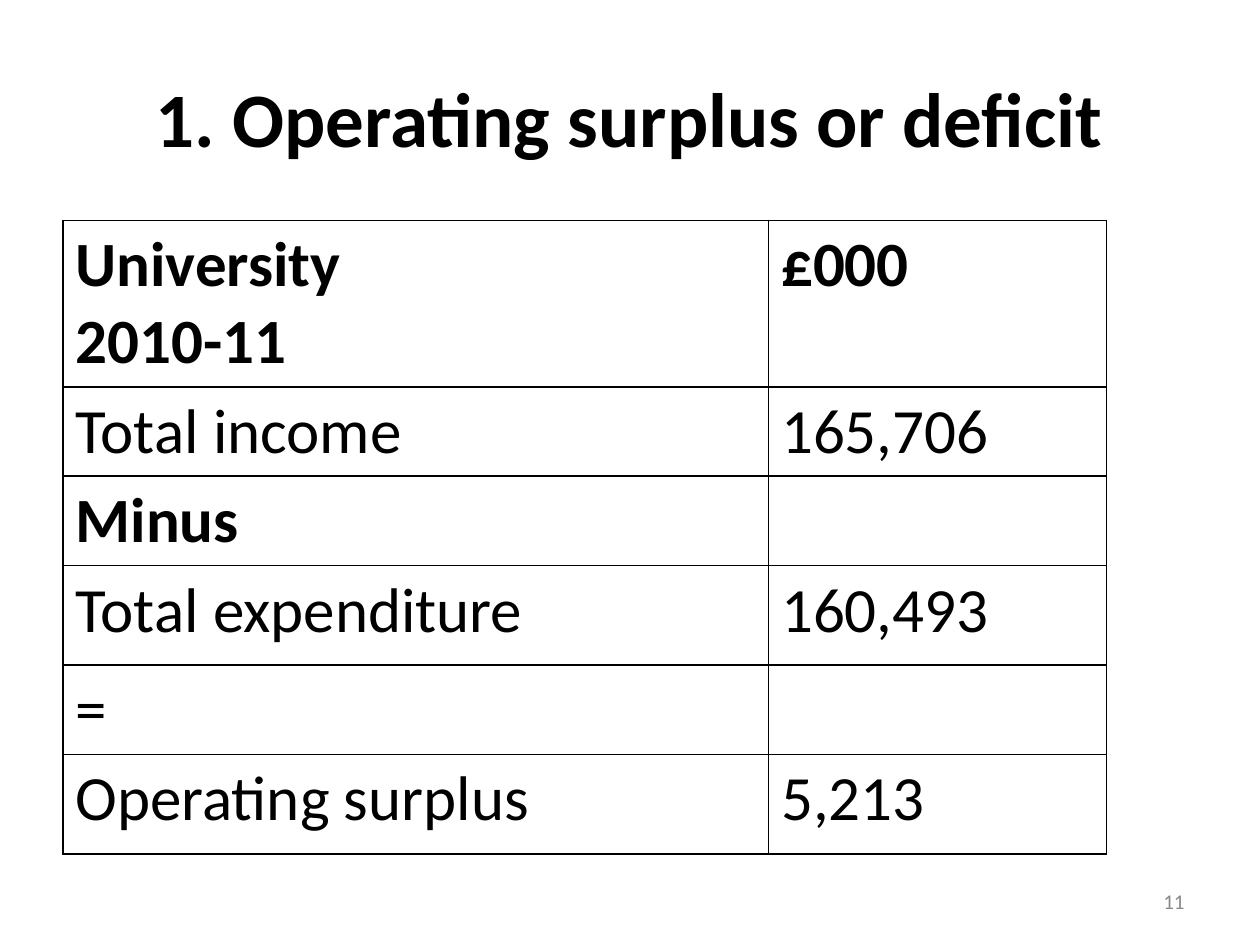
from dataclasses import dataclass

from lxml import etree
from pptx import Presentation
from pptx.dml.color import RGBColor
from pptx.enum.text import MSO_ANCHOR, PP_ALIGN
from pptx.oxml.ns import qn
from pptx.slide import Slide
from pptx.table import _Cell
from pptx.text.text import _Paragraph
from pptx.util import Inches, Pt

BLACK = RGBColor(0x00, 0x00, 0x00)
WHITE = RGBColor(0xFF, 0xFF, 0xFF)
GREY = RGBColor(0x89, 0x89, 0x89)
FONT = "Calibri"
CENTER, RIGHT = PP_ALIGN.CENTER, PP_ALIGN.RIGHT
MIDDLE = MSO_ANCHOR.MIDDLE
BLANK_LAYOUT = 6


@dataclass
class Label:
    text: str
    left: float
    top: float
    width: float
    height: float
    size: int
    color: RGBColor
    align: PP_ALIGN
    bold: bool = False


@dataclass
class Row:
    label: str
    amount: str
    height: float = 0.71
    bold: bool = False


LABELS = [
    Label("1. Operating surplus or deficit", 0.5, 0.3, 9, 1.25, 44, BLACK, CENTER, True),
    Label("11", 7.17, 6.95, 2.33, 0.4, 12, GREY, RIGHT),
]
COLUMN_WIDTHS = [5.6, 2.68]
ROWS = [
    Row("University\n2010-11", "£000", 1.32, True),
    Row("Total income", "165,706"),
    Row("Minus", "", bold=True),
    Row("Total expenditure", "160,493", 0.79),
    Row("=", ""),
    Row("Operating surplus", "5,213", 0.79),
]


def add_run(paragraph: _Paragraph, text: str, size: int, color: RGBColor, bold: bool) -> None:
    run = paragraph.add_run()
    run.text = text
    run.font.name = FONT
    run.font.size = Pt(size)
    run.font.bold = bold
    run.font.color.rgb = color


def add_label(slide: Slide, label: Label) -> None:
    shape = slide.shapes.add_textbox(
        Inches(label.left), Inches(label.top), Inches(label.width), Inches(label.height))
    frame = shape.text_frame
    frame.word_wrap = True
    frame.vertical_anchor = MIDDLE
    paragraph = frame.paragraphs[0]
    paragraph.alignment = label.align
    add_run(paragraph, label.text, label.size, label.color, label.bold)


def add_borders(cell: _Cell) -> None:
    properties = cell._tc.get_or_add_tcPr()
    for side in ("a:lnL", "a:lnR", "a:lnT", "a:lnB"):
        line = etree.SubElement(properties, qn(side), w=str(Pt(1)))
        fill = etree.SubElement(line, qn("a:solidFill"))
        etree.SubElement(fill, qn("a:srgbClr"), val=str(BLACK))


def fill_cell(cell: _Cell, text: str, bold: bool) -> None:
    add_borders(cell)
    cell.fill.solid()
    cell.fill.fore_color.rgb = WHITE
    if not text:
        return
    frame = cell.text_frame
    for index, line in enumerate(text.split("\n")):
        paragraph = frame.add_paragraph() if index else frame.paragraphs[0]
        add_run(paragraph, line, 36, BLACK, bold)


def add_surplus_table(slide: Slide) -> None:
    table = slide.shapes.add_table(
        len(ROWS), len(COLUMN_WIDTHS), Inches(0.5), Inches(1.75),
        Inches(sum(COLUMN_WIDTHS)), Inches(sum(row.height for row in ROWS))).table
    table.first_row = False
    table.horz_banding = False
    for column, width in zip(table.columns, COLUMN_WIDTHS):
        column.width = Inches(width)
    for index, row in enumerate(ROWS):
        table.rows[index].height = Inches(row.height)
        fill_cell(table.cell(index, 0), row.label, row.bold)
        fill_cell(table.cell(index, 1), row.amount, row.bold)


def main() -> None:
    presentation = Presentation()
    presentation.slide_width = Inches(10)
    presentation.slide_height = Inches(7.5)
    slide = presentation.slides.add_slide(presentation.slide_layouts[BLANK_LAYOUT])

    # Title and page number
    for label in LABELS:
        add_label(slide, label)

    # Income less expenditure
    add_surplus_table(slide)

    presentation.save("out.pptx")


if __name__ == "__main__":
    main()
